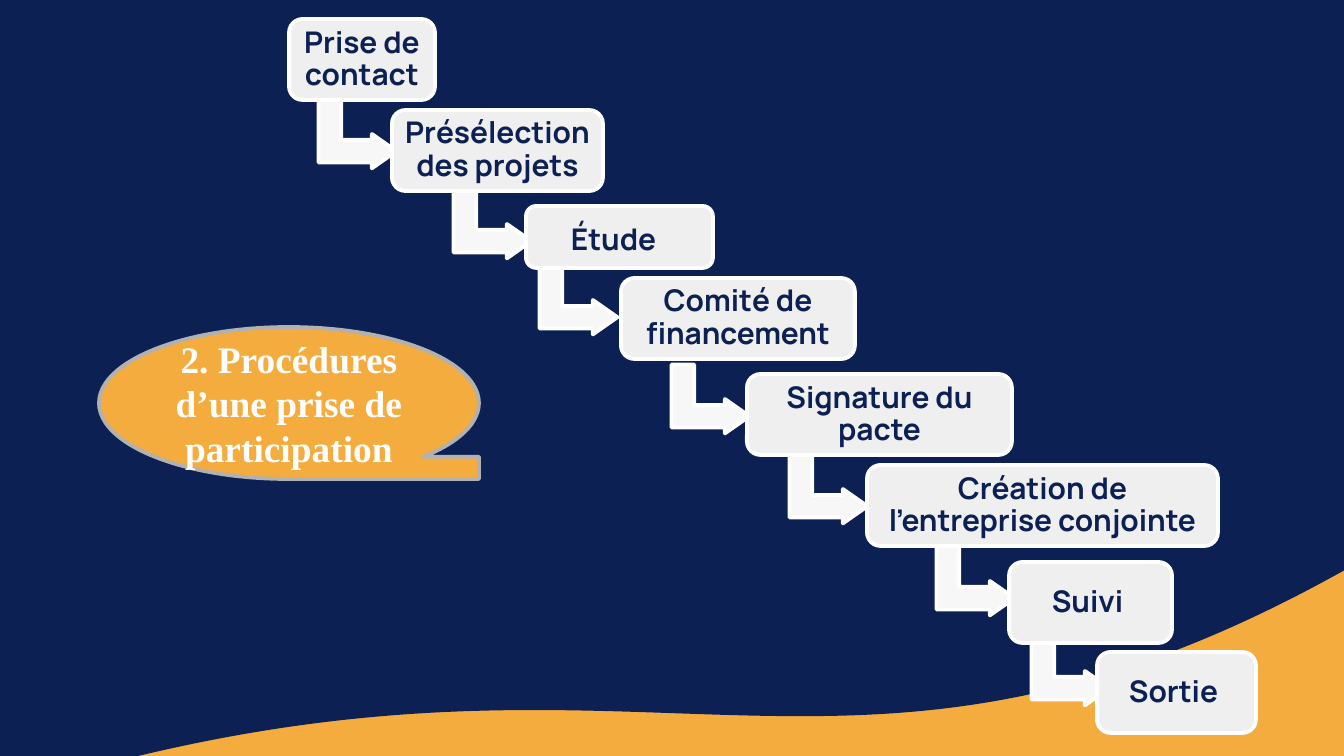
from pptx import Presentation, util as u
from pptx.dml.color import RGBColor
from pptx.enum import shapes, text

PX = 914400 / 134.4
NAVY, ORANGE, WHITE = "0C2054", "F3AC3D", "FFFFFF"
PALE, ARROW, GREY = "EFEFEF", "F7F7F7", "B1B1B1"
SHAPE = shapes.MSO_SHAPE
BOX_H, TEXT_GAP, MARGIN = 81, 4, 9
ARROW_W, ARROW_H = 69, 78

# label, left, top, width, height, arrow left, arrow top
STEPS = [
    ("Prise de contact", 289, 19, 146, BOX_H, (323, 95)),
    ("Présélection des projets", 392, 110, 211, BOX_H, (458, 185)),
    ("Étude", 526, 206, 187, 62, (544, 261)),
    ("Comité de financement", 621, 278, 234, BOX_H, (676, 360)),
    ("Signature du pacte", 747, 374, 265, BOX_H, (794, 450)),
    ("Création de l’entreprise conjointe", 867, 465, 351, BOX_H, (941, 542)),
    ("Suivi ", 1009, 562, 163, BOX_H, (1036, 632)),
    ("Sortie ", 1097, 652, 159, BOX_H, None),
]


def px(n):
    """Turn pixels into EMU."""
    return u.Emu(round(n * PX))


def rgb(value):
    """Turn a hex string into a colour."""
    return RGBColor.from_string(value)


def add_shape(slide, kind, box, fill, line=None, rotation=0, adjust=()):
    """Add a filled preset shape with an optional outline."""
    s = slide.shapes.add_shape(kind, *map(px, box))
    s.shadow.inherit = False
    s.rotation = rotation
    s.fill.solid()
    s.fill.fore_color.rgb = rgb(fill)
    if line:
        s.line.color.rgb = rgb(line)
        s.line.width = u.Pt(2)
    else:
        s.line.fill.background()
    for i, value in enumerate(adjust):
        s.adjustments[i] = value
    return s


def add_run(p, words, font, size, color, bold=True):
    """Append a formatted run to a paragraph."""
    r = p.add_run()
    r.text = words
    r.font.color.rgb = rgb(color)
    for name, value in {"name": font, "size": u.Pt(size), "bold": bold}.items():
        setattr(r.font, name, value)


def centre(tf):
    """Wrap and centre a text frame, returning its paragraph."""
    tf.word_wrap = True
    tf.vertical_anchor = text.MSO_ANCHOR.MIDDLE
    p = tf.paragraphs[0]
    p.alignment = text.PP_ALIGN.CENTER
    return p


def add_background(slide):
    """Add the orange wave and the navy sheet above it."""
    wave = SHAPE.FLOWCHART_DOCUMENT
    add_shape(slide, wave, (105, -335, 1242, 1091), ORANGE, rotation=180)
    sheet = add_shape(slide, wave, (-228, -500, 1609, 1337), NAVY, rotation=341)
    sheet._element.spPr.xfrm.set("flipH", "1")


def add_step(slide, label, left, top, width, height, arrow):
    """Add one step box with its label and the arrow to the next step."""
    if arrow:
        add_shape(slide, SHAPE.BENT_UP_ARROW, (*arrow, ARROW_W, ARROW_H),
                  ARROW, WHITE, 90, (0.328, 0.25, 0.358))
    add_shape(slide, SHAPE.ROUNDED_RECTANGLE, (left, top, width, height),
              PALE, WHITE, adjust=(0.167,))
    inner = (left + TEXT_GAP, top + TEXT_GAP,
             width - 2 * TEXT_GAP, height - 2 * TEXT_GAP)
    tf = slide.shapes.add_textbox(*map(px, inner)).text_frame
    for side in ("left", "top", "right", "bottom"):
        setattr(tf, f"margin_{side}", px(MARGIN))
    p = centre(tf)
    p.line_spacing = 0.9
    add_run(p, label, "Manrope", 16, NAVY)
    if label == "Étude":
        add_run(p, " ", "Arial", 23, WHITE, False)


def add_title(slide):
    """Add the title in its tape-shaped bubble."""
    s = add_shape(slide, SHAPE.FLOWCHART_SEQUENTIAL_ACCESS_STORAGE,
                  (99, 327, 380, 152), ORANGE, GREY)
    add_run(centre(s.text_frame), "2. Procédures d’une prise de participation",
            "Times New Roman", 20, WHITE)


def main():
    """Build and save the slide."""
    prs = Presentation()
    prs.slide_width, prs.slide_height = px(1344), px(756)
    slide = prs.slides.add_slide(prs.slide_layouts[6])
    add_background(slide)
    for step in STEPS:
        add_step(slide, *step)
    add_title(slide)
    prs.save("out.pptx")


if __name__ == "__main__":
    main()
